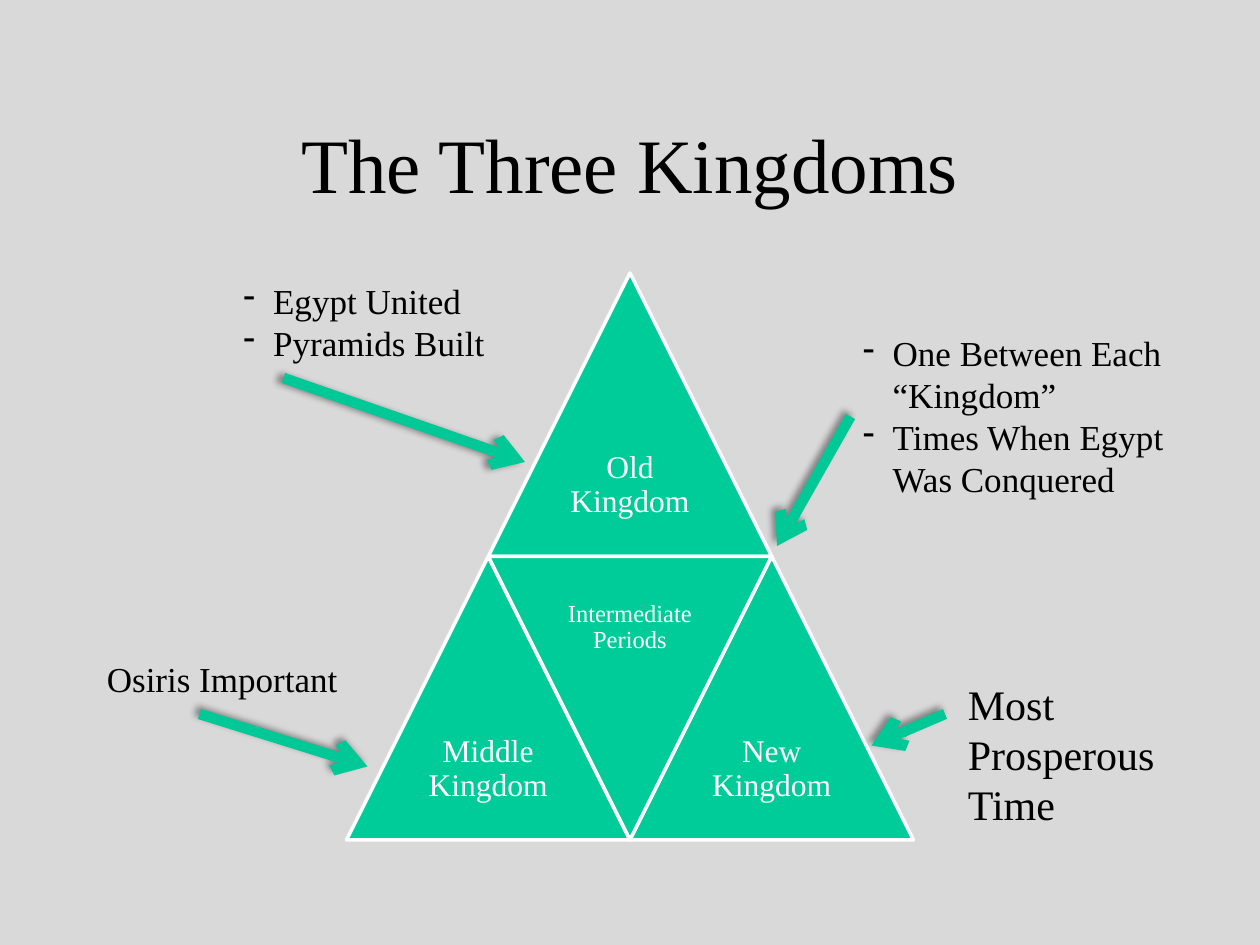
"""Build the slide on the three kingdoms of Egypt."""
from dataclasses import dataclass

from lxml import etree
from pptx import Presentation
from pptx.dml.color import RGBColor
from pptx.enum.shapes import MSO_CONNECTOR, MSO_SHAPE
from pptx.enum.text import MSO_ANCHOR, PP_ALIGN
from pptx.oxml import parse_xml
from pptx.oxml.ns import nsdecls, qn
from pptx.util import Pt

TRIANGLE = MSO_SHAPE.ISOSCELES_TRIANGLE
STRAIGHT = MSO_CONNECTOR.STRAIGHT
TOP, MIDDLE = MSO_ANCHOR.TOP, MSO_ANCHOR.MIDDLE
LEFT, CENTER = PP_ALIGN.LEFT, PP_ALIGN.CENTER


@dataclass(frozen=True)
class Theme:
    font: str = "Times New Roman"
    background: RGBColor = RGBColor(0xD9, 0xD9, 0xD9)
    ink: RGBColor = RGBColor(0, 0, 0)
    white: RGBColor = RGBColor(0xFF, 0xFF, 0xFF)
    green: RGBColor = RGBColor(0, 0xCC, 0x99)
    arrow: RGBColor = RGBColor(0, 0xC8, 0x96)
    title: int = 44
    emphasis: int = 24
    note: int = 20
    kingdom: int = 18
    period: int = 14


theme = Theme()
presentation = Presentation()
presentation.slide_width, presentation.slide_height = Pt(720), Pt(540)
slide = presentation.slides.add_slide(presentation.slide_layouts[6])
slide.background.fill.solid()
slide.background.fill.fore_color.rgb = theme.background


def add_text(box, lines, size, color=theme.ink, align=LEFT, anchor=TOP,
             inset=None, spacing=None, bulleted=False):
    frame = slide.shapes.add_textbox(*map(Pt, box)).text_frame
    frame.word_wrap = True
    frame.vertical_anchor = anchor
    if inset is not None:
        frame.margin_left = frame.margin_right = Pt(inset)
        frame.margin_top = frame.margin_bottom = Pt(inset)
    frame.text = "\n".join(lines)
    for paragraph in frame.paragraphs:
        paragraph.alignment = align
        paragraph.line_spacing = spacing
        paragraph.font.name = theme.font
        paragraph.font.size = Pt(size)
        paragraph.font.color.rgb = color
        if bulleted:
            properties = paragraph._p.get_or_add_pPr()
            properties.set("marL", str(Pt(17)))
            properties.set("indent", str(Pt(-17)))
            bullet = parse_xml(f'<a:buChar {nsdecls("a")} char="-"/>')
            properties.insert_element_before(bullet, "a:tabLst", "a:defRPr", "a:extLst")


def add_arrow(start, end, shadow_angle):
    arrow = slide.shapes.add_connector(STRAIGHT, *map(Pt, start + end))
    arrow.line.color.rgb = theme.arrow
    arrow.line.width = Pt(6)
    properties = arrow._element.spPr
    etree.SubElement(properties.find(qn("a:ln")), qn("a:tailEnd"), type="arrow")
    properties.append(parse_xml(
        f'<a:effectLst {nsdecls("a")}><a:outerShdw blurRad="{Pt(4)}" dist="{Pt(3)}" '
        f'dir="{shadow_angle * 60000}" algn="ctr" rotWithShape="0"><a:srgbClr val="{theme.ink}">'
        '<a:alpha val="40000"/></a:srgbClr></a:outerShdw></a:effectLst>'))


add_text((54, 48, 612, 90), ["The Three Kingdoms"], theme.title, align=CENTER, anchor=MIDDLE)

side = 162
pyramid_left, pyramid_top = 198, 156
pyramid = [
    ("Old Kingdom", 0.5, 0, False, theme.kingdom),
    ("Middle Kingdom", 0, 1, False, theme.kingdom),
    ("Intermediate Periods", 0.5, 1, True, theme.period),
    ("New Kingdom", 1, 1, False, theme.kingdom),
]
for era, column, row, inverted, size in pyramid:
    left, top = pyramid_left + column * side, pyramid_top + row * side
    block = slide.shapes.add_shape(TRIANGLE, Pt(left), Pt(top), Pt(side), Pt(side))
    block.rotation = 180 if inverted else 0
    block.shadow.inherit = False
    block.fill.solid()
    block.fill.fore_color.rgb = theme.green
    block.line.color.rgb = theme.white
    block.line.width = Pt(2)
    label_top = top if inverted else top + side / 2
    add_text((left + side / 4, label_top, side / 2, side / 2), [era], size,
             theme.white, CENTER, MIDDLE, inset=size * 0.28, spacing=0.9)

notes = [
    ((132, 156, 174, 80), ["Egypt United", "Pyramids Built"], theme.note, True,
     (162, 216), (300, 264), 180),
    ((54, 372, 150, 32), ["Osiris Important"], theme.note, False,
     (114, 408), (210, 438), 225),
    ((486, 186, 204, 104), ["One Between Each “Kingdom”", "Times When Egypt Was Conquered"],
     theme.note, True, (486, 238), (444, 312), 225),
    ((546, 384, 150, 94), ["Most Prosperous Time"], theme.emphasis, False,
     (540, 408), (498, 426), 225),
]
for box, facts, size, bulleted, start, end, shadow_angle in notes:
    add_text(box, facts, size, bulleted=bulleted)
    add_arrow(start, end, shadow_angle)

presentation.save("out.pptx")
